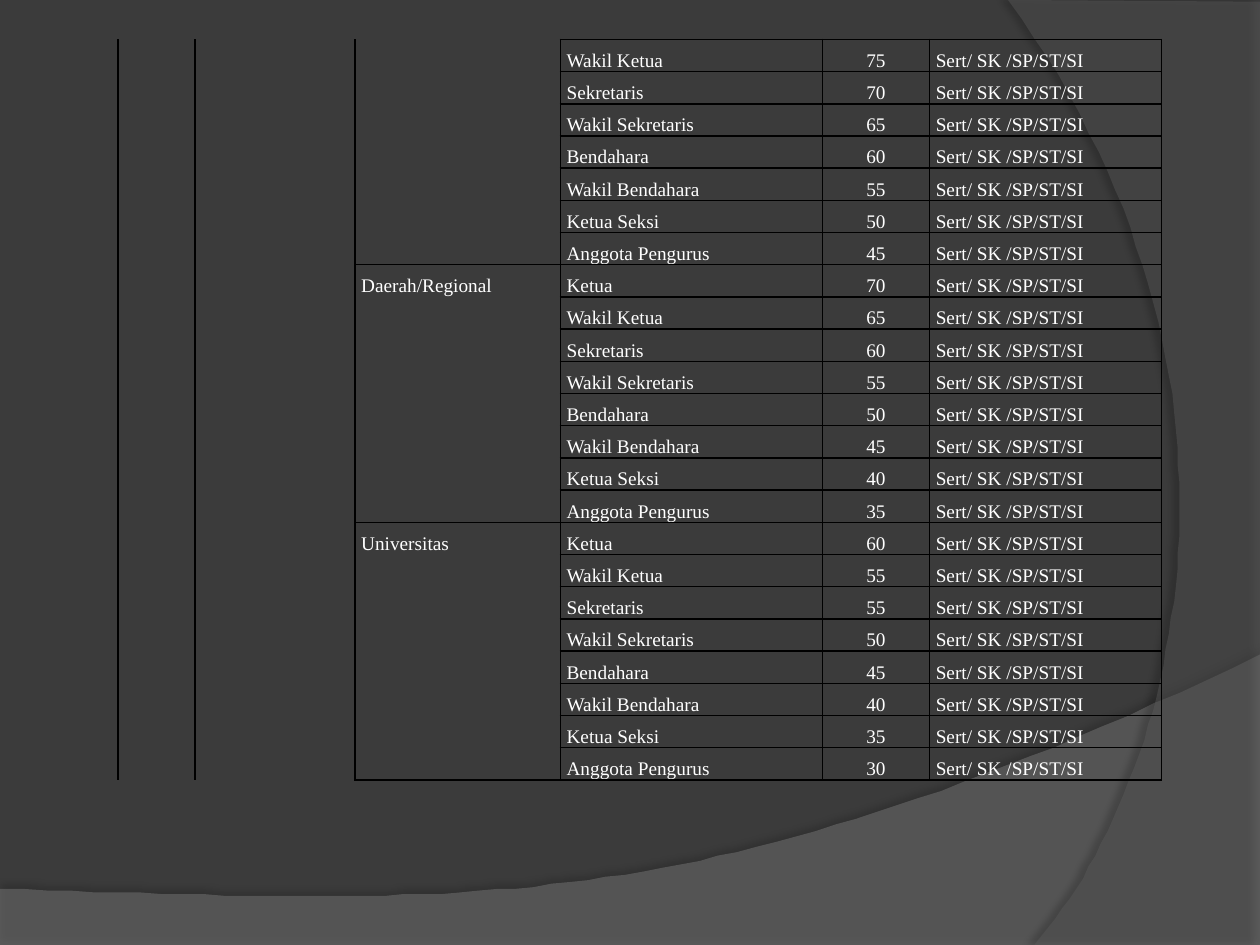
from lxml import etree
from pptx import Presentation
from pptx.dml.color import RGBColor
from pptx.enum.text import PP_ALIGN
from pptx.oxml.ns import qn
from pptx.util import Pt

CENTER = PP_ALIGN.CENTER
BACKGROUND = RGBColor(0x3B, 0x3B, 0x3B)
WAVE = RGBColor(0x7F, 0x7F, 0x7F)
ARC = RGBColor(0x5E, 0x5E, 0x5E)
WHITE = RGBColor(0xFF, 0xFF, 0xFF)
BLACK = RGBColor(0, 0, 0)
FONT = "Times New Roman"
NO_STYLE = "{2D5ABB26-0587-4C30-8999-92F81FD0307C}"

prs = Presentation()
prs.slide_width, prs.slide_height = Pt(720), Pt(540)
s = prs.slides.add_slide(prs.slide_layouts[6])
s.background.fill.solid()
s.background.fill.fore_color.rgb = BACKGROUND


def add_color(parent, color, alpha=100):
    clr = etree.SubElement(parent, qn("a:srgbClr"), val=str(color))
    if alpha < 100:
        etree.SubElement(clr, qn("a:alpha"), val=str(alpha * 1000))


def set_border(tcPr, side, visible):
    ln = etree.SubElement(tcPr, qn("a:ln" + side), w=str(Pt(1)))
    if visible:
        add_color(etree.SubElement(ln, qn("a:solidFill")), BLACK)
    else:
        etree.SubElement(ln, qn("a:noFill"))


# Background swooshes: straight corners, then one Bezier edge
# corners, curve (4 control points), colour, opacity,
# shadow opacity, shadow distance, shadow direction
swooshes = [
    ([(0, 507.6), (0, 540), (720, 540)],
     [(720, 374.4), (402.5, 524.9), (281.5, 517.7), (0, 507.6)],
     WAVE, 45, 35, 3.5, 270),
    ([(720, 1.4), (720, 540)],
     [(591.1, 540), (673.2, 445.7), (733, 216), (576, 0)],
     ARC, 40, 45, 4, 180),
]
STEPS = 60
for corners, curve, color, alpha, sh_alpha, sh_dist, sh_dir in swooshes:
    points = list(corners)
    for i in range(STEPS + 1):
        t = i / STEPS
        weights = ((1 - t) ** 3, 3 * t * (1 - t) ** 2, 3 * t * t * (1 - t), t ** 3)
        points.append(tuple(sum(w * pt[k] for w, pt in zip(weights, curve))
                            for k in (0, 1)))
    fb = s.shapes.build_freeform(*points[0], scale=Pt(1))
    fb.add_line_segments(points[1:], close=True)
    sp = fb.convert_to_shape()
    sp.line.fill.background()
    sp.fill.solid()
    sp.fill.fore_color.rgb = color
    clr = sp._element.spPr.find(qn("a:solidFill"))[0]
    etree.SubElement(clr, qn("a:alpha"), val=str(alpha * 1000))
    sp.shadow.inherit = False
    shadow = etree.SubElement(
        sp._element.spPr.find(qn("a:effectLst")), qn("a:outerShdw"),
        blurRad=str(Pt(4)), dist=str(Pt(sh_dist)), dir=str(sh_dir * 60000),
        algn="ctr", rotWithShape="0")
    add_color(shadow, BLACK, sh_alpha)

# Table contents: the first group carries on without its heading and chair
ROLES = ["Ketua", "Wakil Ketua", "Sekretaris", "Wakil Sekretaris", "Bendahara",
         "Wakil Bendahara", "Ketua Seksi", "Anggota Pengurus"]
EVIDENCE = "Sert/ SK /SP/ST/SI"
groups = [
    ("", ROLES[1:], [75, 70, 65, 60, 55, 50, 45]),
    ("Daerah/Regional", ROLES, [70, 65, 60, 55, 50, 45, 40, 35]),
    ("Universitas", ROLES, [60, 55, 55, 50, 45, 40, 35, 30]),
]
rows = []
group_starts, group_ends = [], []
for level, roles, scores in groups:
    if level:
        group_starts.append(len(rows))
    for i, (role, score) in enumerate(zip(roles, scores)):
        rows.append(["", "", "" if i else level, role, str(score), EVIDENCE])
    group_ends.append(len(rows) - 1)

# Table
COL_WIDTHS = [43.9, 91.4, 117.4, 149.8, 61.2, 132.5]
ROW_HEIGHT = 18.4
LEVEL_COL, SCORE_COL = 2, 4
table = s.shapes.add_table(len(rows), len(COL_WIDTHS), Pt(67.5), Pt(22.5),
                           Pt(sum(COL_WIDTHS)), Pt(ROW_HEIGHT * len(rows))).table
table.first_row = table.horz_banding = False
table._tbl.tblPr.find(qn("a:tableStyleId")).text = NO_STYLE
for col, width in zip(table.columns, COL_WIDTHS):
    col.width = Pt(width)

for r, row in enumerate(rows):
    table.rows[r].height = Pt(ROW_HEIGHT)
    for c, text in enumerate(row):
        cell = table.cell(r, c)
        cell.margin_left = cell.margin_right = Pt(3.6)
        cell.margin_top = cell.margin_bottom = 0
        p = cell.text_frame.paragraphs[0]
        if text:
            cell.text = text
            p = cell.text_frame.paragraphs[0]
            p.line_spacing = 1.5
            p.font.name, p.font.size = FONT, Pt(11)
            p.font.color.rgb = WHITE
            if c == SCORE_COL:
                p.alignment = CENTER
        else:
            etree.SubElement(p._p, qn("a:endParaRPr"), sz="1100")

        # Left columns stay open above and below; groups are ruled off
        full = c > LEVEL_COL
        top = full or (c == LEVEL_COL and r in group_starts)
        bottom = full or (c == LEVEL_COL and r in group_ends)
        tcPr = cell._tc.get_or_add_tcPr()
        for side, visible in zip("LRTB", (True, True, top, bottom)):
            set_border(tcPr, side, visible)
        cell.fill.background()

# The regional level spans its whole group
table.cell(group_starts[0], LEVEL_COL).merge(table.cell(group_ends[1], LEVEL_COL))

prs.save("out.pptx")
